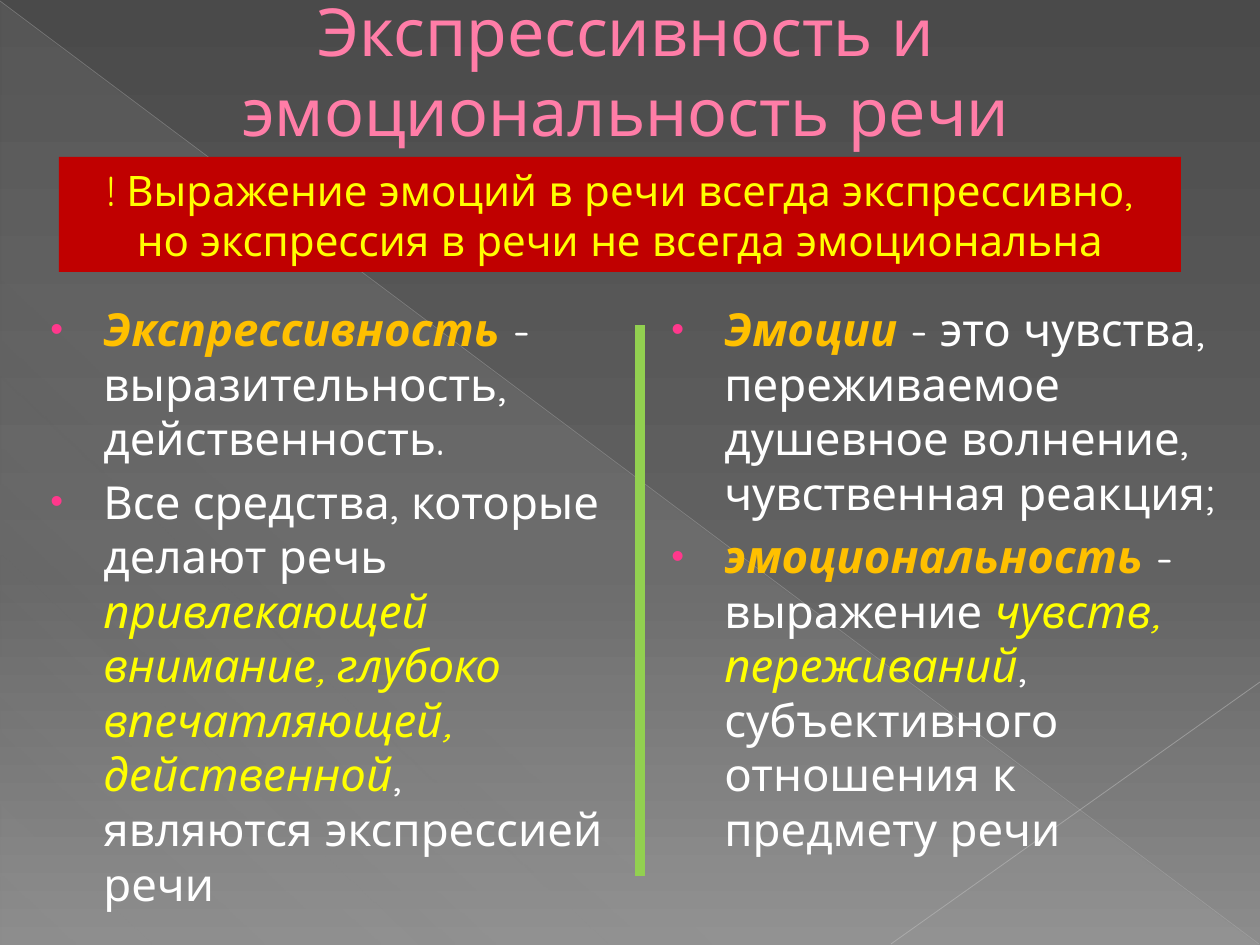
from dataclasses import dataclass
from typing import Optional

from lxml.etree import SubElement
from pptx import Presentation
from pptx.dml.color import RGBColor
from pptx.enum.shapes import MSO_CONNECTOR as Connector, MSO_SHAPE as Preset
from pptx.enum.text import MSO_ANCHOR as Anchor, MSO_AUTO_SIZE as AutoSize, PP_ALIGN as Align
from pptx.oxml import parse_xml
from pptx.oxml.ns import nsdecls, qn
from pptx.util import Emu, Pt

FONT = "Quicksand"
PX_PER_INCH = 126
COLORS = {
    "title": "FF7DA7",
    "bullet": "FF388C",
    "term": "FFC000",
    "plain": "FFFFFF",
    "accent": "FFFF00",
    "banner": "C00000",
    "divider": "92D050",
    "long_ray": "BFBFBF",
    "short_ray": "C6C6C6",
}


@dataclass
class Box:
    left: int
    top: int
    width: int
    height: int


@dataclass
class Stop:
    position: int
    color: str
    opacity: int = 100


@dataclass
class Rule:
    start: tuple[int, int]
    end: tuple[int, int]
    color: str
    width: float
    opacity: Optional[int] = None


@dataclass
class Piece:
    text: str
    style: str = "plain"


@dataclass
class Column:
    box: Box
    paragraphs: list[list[Piece]]


BACKDROP = [Stop(0, "4A4A4A"), Stop(60, "626262"), Stop(100, "8C8C8C")]
SHEEN = [Stop(0, "D2D2D2", 10), Stop(70, "D2D2D2", 8), Stop(100, "D2D2D2", 1)]
RAYS = [
    Rule((0, 1), (1259, 944), "long_ray", 0.39, 35),
    Rule((1260, 682), (891, 944), "short_ray", 0.47, 45),
]
DIVIDER = Rule((640, 325), (640, 876), "divider", 6)
TITLE_BOX = Box(59, 0, 1134, 140)
BANNER_BOX = Box(59, 157, 1122, 115)
BANNER_LINES = [
    "! Выражение эмоций в речи всегда экспрессивно,",
    "но экспрессия в речи не всегда эмоциональна",
]
COLUMNS = [
    Column(Box(29, 295, 590, 624), [
        [Piece("Экспрессивность", "term"), Piece(" - выразительность, действенность.")],
        [
            Piece("Все средства, которые делают речь "),
            Piece("привлекающей внимание, глубоко впечатляющей, действенной", "accent"),
            Piece(", являются экспрессией речи"),
        ],
    ]),
    Column(Box(650, 295, 580, 624), [
        [
            Piece("Эмоции", "term"),
            Piece(" - это чувства, переживаемое душевное волнение, чувственная реакция;"),
        ],
        [
            Piece("эмоциональность", "term"),
            Piece(" - выражение "),
            Piece("чувств, переживаний", "accent"),
            Piece(", субъективного отношения к предмету речи"),
        ],
    ]),
]


def px(value: int) -> Emu:
    return Emu(round(value * 914400 / PX_PER_INCH))


def place(box: Box) -> tuple[Emu, Emu, Emu, Emu]:
    return px(box.left), px(box.top), px(box.width), px(box.height)


def rgb(name: str) -> RGBColor:
    return RGBColor.from_string(COLORS[name])


def set_font(font, size: float, color: str) -> None:
    font.name = FONT
    font.size = Pt(size)
    font.color.rgb = rgb(color)


def use_gradient(solid_fill, stops: list[Stop], angle: int) -> None:
    entries = "".join(
        f'<a:gs pos="{stop.position * 1000}"><a:srgbClr val="{stop.color}">'
        f'<a:alpha val="{stop.opacity * 1000}"/></a:srgbClr></a:gs>'
        for stop in stops
    )
    gradient = parse_xml(
        f'<a:gradFill {nsdecls("a")} rotWithShape="1"><a:gsLst>{entries}</a:gsLst>'
        f'<a:lin ang="{angle * 60000}" scaled="0"/></a:gradFill>'
    )
    solid_fill.getparent().replace(solid_fill, gradient)


def add_shape(slide, preset: Preset, box: Box, color: str):
    shape = slide.shapes.add_shape(preset, *place(box))
    shape.shadow.inherit = False
    shape.fill.solid()
    shape.fill.fore_color.rgb = rgb(color)
    shape.line.fill.background()
    return shape


def add_rule(slide, rule: Rule) -> None:
    ends = [px(value) for value in rule.start + rule.end]
    connector = slide.shapes.add_connector(Connector.STRAIGHT, *ends)
    connector.line.color.rgb = rgb(rule.color)
    connector.line.width = Pt(rule.width)
    properties = connector._element.spPr
    if rule.opacity is not None:
        color = properties.find(f'.//{qn("a:srgbClr")}')
        SubElement(color, qn("a:alpha"), val=str(rule.opacity * 1000))
    SubElement(properties, qn("a:effectLst"))


def add_bullet(paragraph) -> None:
    properties = paragraph._p.get_or_add_pPr()
    properties.set("marL", str(px(62)))
    properties.set("indent", str(-px(53)))
    color = SubElement(properties, qn("a:buClr"))
    SubElement(color, qn("a:srgbClr"), val=COLORS["bullet"])
    SubElement(properties, qn("a:buSzPct"), val="80000")
    SubElement(properties, qn("a:buFont"), typeface="Arial")
    SubElement(properties, qn("a:buChar"), char="•")


def add_column(slide, column: Column) -> None:
    frame = slide.shapes.add_textbox(*place(column.box)).text_frame
    frame.word_wrap = True
    for index, pieces in enumerate(column.paragraphs):
        paragraph = frame.add_paragraph() if index else frame.paragraphs[0]
        add_bullet(paragraph)
        if index:
            paragraph.space_before = Pt(5)
        for piece in pieces:
            run = paragraph.add_run()
            run.text = piece.text
            set_font(run.font, 26, piece.style)
            run.font.bold = piece.style == "term"
            run.font.italic = piece.style != "plain"


def format_title(slide) -> None:
    title = slide.shapes.title
    slide.shapes._spTree.append(title._element)
    title.left, title.top, title.width, title.height = place(TITLE_BOX)
    frame = title.text_frame
    frame.text = "Экспрессивность и эмоциональность речи"
    frame.word_wrap = True
    frame.auto_size = AutoSize.NONE
    frame.vertical_anchor = Anchor.MIDDLE
    frame.paragraphs[0].alignment = Align.CENTER
    set_font(frame.paragraphs[0].runs[0].font, 37.8, "title")


def add_banner(slide) -> None:
    frame = add_shape(slide, Preset.RECTANGLE, BANNER_BOX, "banner").text_frame
    frame.text = "\n".join(BANNER_LINES)
    frame.word_wrap = True
    frame.auto_size = AutoSize.SHAPE_TO_FIT_TEXT
    for paragraph in frame.paragraphs:
        paragraph.alignment = Align.CENTER
        set_font(paragraph.runs[0].font, 24, "accent")


def main() -> None:
    presentation = Presentation()
    presentation.slide_width, presentation.slide_height = px(1260), px(945)
    slide = presentation.slides.add_slide(presentation.slide_layouts[5])
    slide.background.fill.solid()
    use_gradient(slide._element.xpath("./p:cSld/p:bg/p:bgPr/a:solidFill")[0], BACKDROP, 90)
    triangle = add_shape(slide, Preset.RIGHT_TRIANGLE, Box(1, 2, 1258, 943), "plain")
    use_gradient(triangle._element.spPr.find(qn("a:solidFill")), SHEEN, 133)
    for ray in RAYS:
        add_rule(slide, ray)
    format_title(slide)
    for column in COLUMNS:
        add_column(slide, column)
    add_banner(slide)
    add_rule(slide, DIVIDER)
    presentation.save("out.pptx")


if __name__ == "__main__":
    main()
